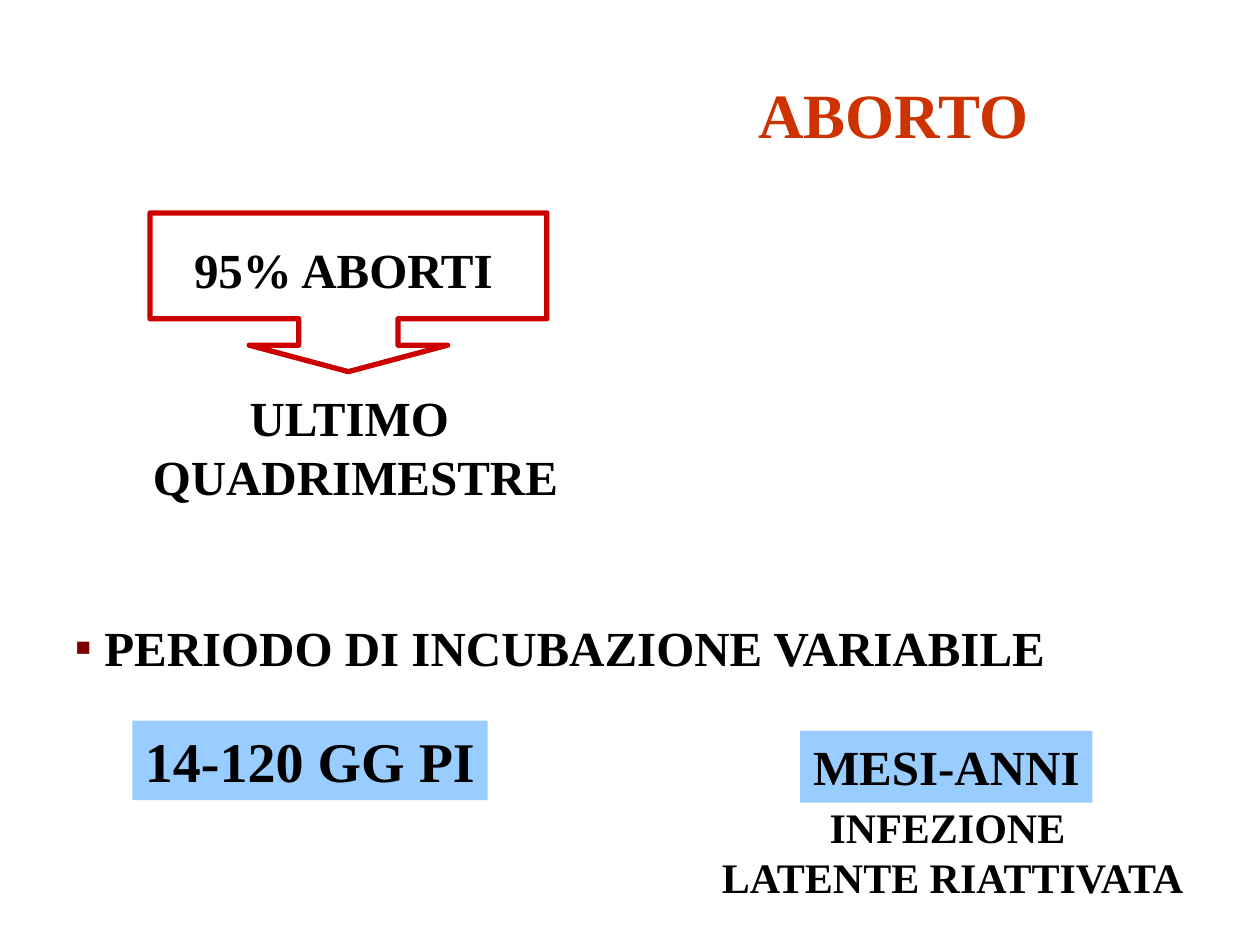
from dataclasses import dataclass
from typing import Optional

from lxml import etree
from pptx import Presentation
from pptx.dml.color import RGBColor
from pptx.enum import shapes, text
from pptx.oxml import ns
from pptx.util import Inches, Pt

FONT = "Times New Roman"
BLACK, RED, ORANGE, BLUE, MAROON = "000000", "CC0000", "CC3300", "99CCFF", "800000"


@dataclass
class Label:
    lines: tuple[str, ...]
    left: float
    top: float
    width: float
    height: float
    size: int = 28
    color: str = BLACK
    fill: Optional[str] = None
    wrap: bool = False
    spacing: float = 1.0
    bullet: bool = False
    shadow: bool = False


LABELS = (
    Label(("ABORTO",), 4.53, 0.52, 5.12, 0.73, size=36, color=ORANGE,
          wrap=True, spacing=1.05, shadow=True),
    Label(("95% ABORTI",), 1.42, 1.85, 2.61, 0.57),
    Label(("ULTIMO ", "QUADRIMESTRE"), 1.11, 3.03, 3.42, 1.03),
    Label(("14-120 GG PI",), 1.05, 5.72, 2.82, 0.63, size=32, fill=BLUE),
    Label(("MESI-ANNI",), 6.35, 5.8, 2.32, 0.57, fill=BLUE),
    Label(("INFEZIONE", " LATENTE RIATTIVATA"), 5.47, 6.31, 4.1, 0.9, size=24),
    Label(("PERIODO DI INCUBAZIONE VARIABILE",), 0.2, 4.85, 8.58, 0.57,
          wrap=True, bullet=True),
)


def rgb(color: str) -> RGBColor:
    return RGBColor.from_string(color)


def add_child(parent, tag: str, **attributes: str):
    return etree.SubElement(parent, ns.qn(tag), attributes)


def add_bullet(paragraph) -> None:
    properties = paragraph._p.get_or_add_pPr()
    add_child(add_child(properties, "a:buClr"), "a:srgbClr", val=MAROON)
    add_child(properties, "a:buFont", typeface=FONT)
    add_child(properties, "a:buChar", char="▪")


def add_text_shadow(run) -> None:
    """Must follow the fill colour and precede the typeface."""
    effects = etree.Element(ns.qn("a:effectLst"))
    shadow = add_child(effects, "a:outerShdw", dist="35921", dir="2700000")
    add_child(shadow, "a:srgbClr", val="C0C0C0")
    run._r.get_or_add_rPr().find(ns.qn("a:solidFill")).addnext(effects)


def add_label(slide, label: Label) -> None:
    box = [Inches(value) for value in (label.left, label.top, label.width, label.height)]
    if label.fill:
        shape = slide.shapes.add_shape(shapes.MSO_SHAPE.RECTANGLE, *box)
        shape.shadow.inherit = False
        shape.fill.solid()
        shape.fill.fore_color.rgb = rgb(label.fill)
        shape.line.fill.background()
    else:
        shape = slide.shapes.add_textbox(*box)
    frame = shape.text_frame
    frame_format = {
        "word_wrap": label.wrap,
        "auto_size": text.MSO_AUTO_SIZE.SHAPE_TO_FIT_TEXT,
        "vertical_anchor": text.MSO_ANCHOR.TOP,
    }
    for name, value in frame_format.items():
        setattr(frame, name, value)

    for index, line in enumerate(label.lines):
        paragraph = frame.add_paragraph() if index else frame.paragraphs[0]
        paragraph.alignment = text.PP_ALIGN.CENTER
        if label.spacing != 1:
            paragraph.line_spacing = label.spacing
        if label.bullet:
            add_bullet(paragraph)
        run = paragraph.add_run()
        run.text = line
        for name, value in {"name": FONT, "size": Pt(label.size), "bold": True}.items():
            setattr(run.font, name, value)
        run.font.color.rgb = rgb(label.color)
        if label.shadow:
            add_text_shadow(run)


def add_callout(slide) -> None:
    callout = slide.shapes.add_shape(
        shapes.MSO_SHAPE.DOWN_ARROW_CALLOUT,
        Inches(1.19), Inches(1.69), Inches(3.15), Inches(1.26))
    for index, value in enumerate((0.625, 0.625, 1 / 6, 2 / 3)):
        callout.adjustments[index] = value
    callout.shadow.inherit = False
    callout.fill.background()
    callout.line.color.rgb = rgb(RED)
    callout.line.width = Pt(3)


def main() -> None:
    presentation = Presentation()
    presentation.slide_width, presentation.slide_height = Inches(10), Inches(7.5)
    slide = presentation.slides.add_slide(presentation.slide_layouts[6])
    for label in LABELS:
        add_label(slide, label)
    add_callout(slide)
    presentation.save("out.pptx")


if __name__ == "__main__":
    main()
